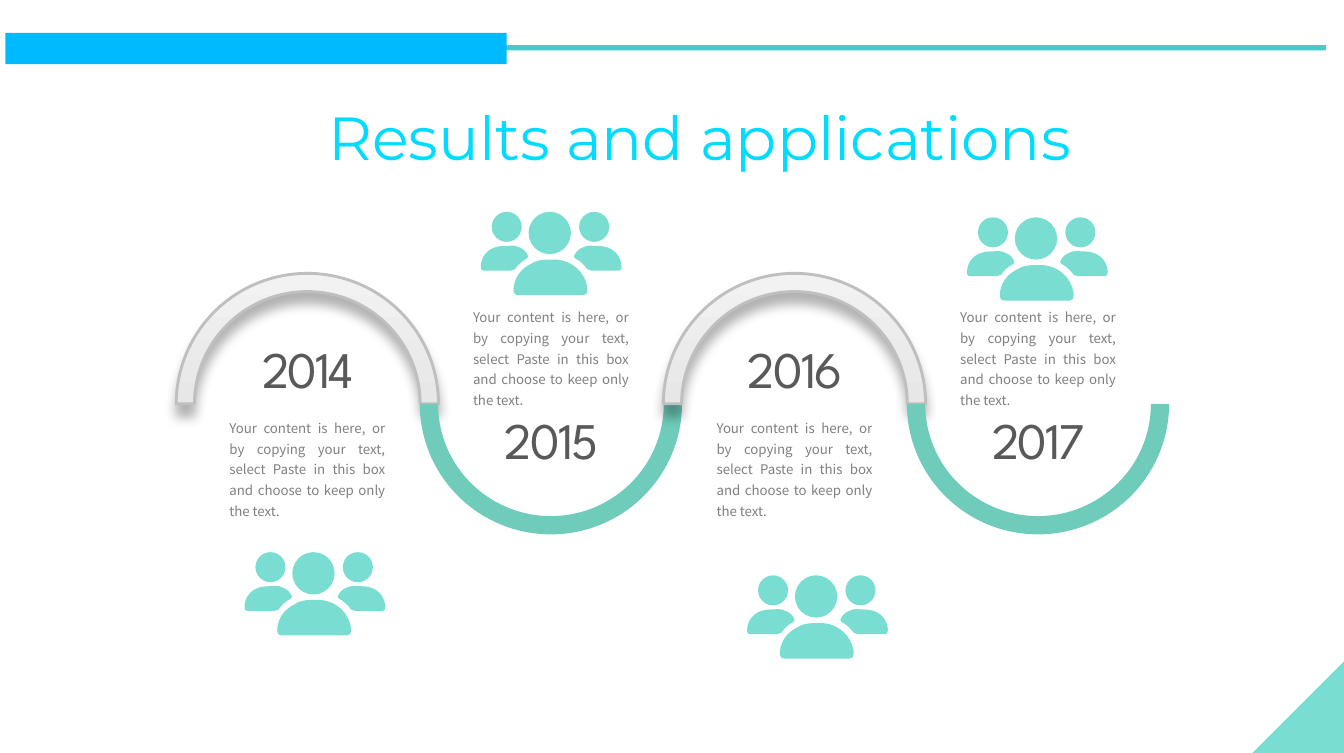
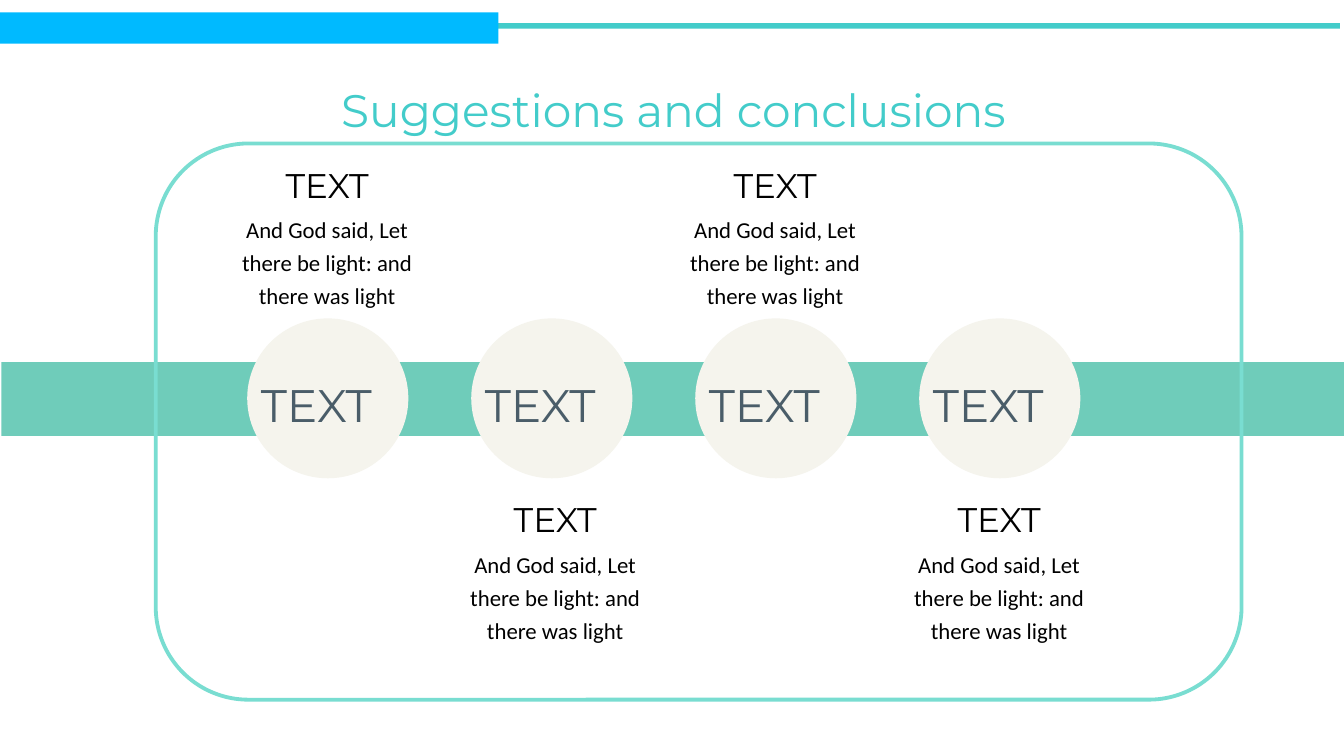
from dataclasses import dataclass

from lxml.etree import SubElement
from pptx import Presentation
from pptx.dml.color import RGBColor
from pptx.enum.shapes import MSO_SHAPE
from pptx.enum.text import MSO_AUTO_SIZE, PP_ALIGN
from pptx.oxml.ns import qn
from pptx.util import Inches, Pt


@dataclass(frozen=True)
class Theme:
    bar: str = "00BAFF"
    rule: str = "43CCCA"
    bright_title: str = "00DCFF"
    mint: str = "79DDD1"
    green: str = "6FCCBA"
    cream: str = "F5F4ED"
    silver_dark: str = "D9D9D9"
    silver_light: str = "F2F2F2"
    silver_edge: str = "BFBFBF"
    year: str = "595959"
    note: str = "808080"
    label: str = "4A5D69"
    black: str = "000000"
    heading_font: str = "Montserrat"
    year_font: str = "League Spartan"
    note_font: str = "Noto Sans CJK SC"
    body_font: str = "Calibri"
    big_title_size: float = 32
    year_size: float = 27
    title_size: float = 24
    label_size: float = 24
    heading_size: float = 18
    body_size: float = 12
    note_size: float = 7


THEME = Theme()
WIDTH, HEIGHT = 9.84, 5.51

NOTE = ("Your content is here, or by copying your text, select Paste in this box "
        "and choose to keep only the text.")
VERSE = "And God said, Let there be light: and there was light"

# Each outline is a start point, then three points for every cubic curve.
ICON_WIDTH = 1.03
BODY = [
    (0.28, 0.61),
    (0.25, 0.61), (0.24, 0.60), (0.24, 0.56),
    (0.25, 0.48), (0.29, 0.42), (0.37, 0.38),
    (0.40, 0.36), (0.44, 0.35), (0.49, 0.35),
    (0.51, 0.35), (0.54, 0.35), (0.56, 0.35),
    (0.67, 0.36), (0.76, 0.44), (0.78, 0.55),
    (0.78, 0.56), (0.78, 0.56), (0.78, 0.57),
    (0.78, 0.60), (0.77, 0.61), (0.75, 0.61),
]
SHOULDER = [
    (0.03, 0.43),
    (0.00, 0.43), (0.00, 0.42), (0.00, 0.39),
    (0.01, 0.30), (0.08, 0.25), (0.17, 0.25),
    (0.21, 0.25), (0.25, 0.24), (0.28, 0.26),
    (0.31, 0.27), (0.33, 0.29), (0.34, 0.31),
    (0.35, 0.32), (0.35, 0.33), (0.34, 0.34),
    (0.30, 0.36), (0.27, 0.39), (0.25, 0.42),
    (0.24, 0.43), (0.23, 0.43), (0.22, 0.43),
]
HEADS = [(0.35, 0.31), (0.08, 0.22), (0.72, 0.22)]  # left, diameter


def paint(shape, fill=None, line=None, line_width=1):
    shape.shadow.inherit = False
    if fill:
        shape.fill.solid()
        shape.fill.fore_color.rgb = RGBColor.from_string(fill)
    else:
        shape.fill.background()
    if line:
        shape.line.color.rgb = RGBColor.from_string(line)
        shape.line.width = Pt(line_width)
    else:
        shape.line.fill.background()


def add_shape(shapes, kind, left, top, width, height, **colours):
    shape = shapes.add_shape(kind, Inches(left), Inches(top), Inches(width), Inches(height))
    paint(shape, **colours)
    return shape


def add_text(page, left, top, width, height, paragraphs, align=PP_ALIGN.CENTER,
             line_spacing=1.0, space=0, wrap=True, inset=0.04):
    """Add a text box; each paragraph is (text, size, font, colour, letter spacing)."""
    box = page.shapes.add_textbox(Inches(left), Inches(top), Inches(width), Inches(height))
    frame = box.text_frame
    frame.word_wrap = wrap
    frame.auto_size = MSO_AUTO_SIZE.SHAPE_TO_FIT_TEXT
    frame.margin_left = frame.margin_right = Inches(0.07)
    frame.margin_top = frame.margin_bottom = Inches(inset)
    for index, (text, size, font, colour, tracking) in enumerate(paragraphs):
        para = frame.add_paragraph() if index else frame.paragraphs[0]
        para.alignment = align
        para.line_spacing = line_spacing
        para.space_before = para.space_after = Pt(space)
        span = para.add_run()
        span.text = text
        span.font.size = Pt(size)
        span.font.name = font
        span.font.color.rgb = RGBColor.from_string(colour)
        if tracking:
            span.font._element.set("spc", str(round(tracking * 100)))


def add_title(page, left, top, width, height, text, size, colour):
    add_text(page, left, top, width, height,
             [(text, size, THEME.heading_font, colour, 0)], line_spacing=1.5, inset=0)


def add_banner(page, left, top, rule_left, rule_top):
    add_shape(page.shapes, MSO_SHAPE.RECTANGLE, rule_left, rule_top, 9.66, 0.04, fill=THEME.rule)
    add_shape(page.shapes, MSO_SHAPE.RECTANGLE, left, top, 3.67, 0.23, fill=THEME.bar)


def add_drop_shadow(shape):
    effects = shape._element.spPr.find(qn("a:effectLst"))
    shadow = SubElement(effects, qn("a:outerShdw"), blurRad=str(Pt(6)), dist=str(Pt(6)),
                        dir="5400000", algn="t", rotWithShape="0")
    colour = SubElement(shadow, qn("a:srgbClr"), val=THEME.black)
    SubElement(colour, qn("a:alpha"), val="30000")


def add_arc(page, left, raised):
    """Add one half ring of the wave: a silver crest or a green trough."""
    arc = add_shape(page.shapes, MSO_SHAPE.BLOCK_ARC, left, 2, 1.92, 1.91, fill=THEME.green)
    for index, value in enumerate((108, 0, 0.07)):
        arc.adjustments[index] = value
    if not raised:
        arc.rotation = 180
        return
    arc.fill.gradient()
    arc.fill.gradient_angle = 90
    for stop, colour in zip(arc.fill.gradient_stops, (THEME.silver_dark, THEME.silver_light)):
        stop.color.rgb = RGBColor.from_string(colour)
    arc.line.color.rgb = RGBColor.from_string(THEME.silver_edge)
    arc.line.width = Pt(1.5)
    add_drop_shadow(arc)


def add_curved_outline(shapes, left, top, points):
    """Build a freeform, then join each three line segments into one cubic curve."""
    vertices = [(Inches(left + x), Inches(top + y)) for x, y in points]
    builder = shapes.build_freeform(*vertices[0])
    builder.add_line_segments(vertices[1:], close=True)
    shape = builder.convert_to_shape()
    segments = list(shape._element.iter(qn("a:lnTo")))[:len(points) - 1]
    for first in range(0, len(segments), 3):
        curve = segments[first]
        curve.tag = qn("a:cubicBezTo")
        for segment in segments[first + 1:first + 3]:
            curve.append(segment[0])
            segment.getparent().remove(segment)
    paint(shape, fill=THEME.mint)


def add_people_icon(page, left, top):
    shapes = page.shapes.add_group_shape().shapes
    mirrored = [(ICON_WIDTH - x, y) for x, y in SHOULDER]
    for points in (BODY, SHOULDER, mirrored):
        add_curved_outline(shapes, left, top, points)
    for offset, size in HEADS:
        add_shape(shapes, MSO_SHAPE.OVAL, left + offset, top, size, size, fill=THEME.mint)


def build_results(page):
    pitch = 5.35 / 3
    icons = [(1.79, 4.04), (3.52, 1.55), (5.47, 4.21), (7.08, 1.59)]
    for index in range(len(icons)):
        add_arc(page, 1.29 + pitch * index, raised=index % 2 == 0)
    for index, icon in enumerate(icons):
        shift = pitch * index
        raised = index % 2 == 0
        add_text(page, 1.83 + shift, 2.43 if raised else 2.95, 0.85, 0.53,
                 [(str(2014 + index), THEME.year_size, THEME.year_font, THEME.year, -1.1)],
                 wrap=False)
        add_text(page, 1.61 + shift, 3 if raised else 2.19, 1.28, 0.83,
                 [(NOTE, THEME.note_size, THEME.note_font, THEME.note, 0)],
                 align=PP_ALIGN.JUSTIFY, line_spacing=1.3)
        add_people_icon(page, *icon)
    add_title(page, 1.99, 0.46, 6.27, 0.72, "Results and applications",
              THEME.big_title_size, THEME.bright_title)
    corner = add_shape(page.shapes, MSO_SHAPE.RIGHT_TRIANGLE, 9.16, 4.84, 0.68, 0.68,
                       fill=THEME.mint)
    corner.rotation = 270
    add_banner(page, 0.04, 0.24, rule_left=0.05, rule_top=0.33)


def build_conclusions(page):
    pitch = 1.64
    add_shape(page.shapes, MSO_SHAPE.RECTANGLE, 0.01, 2.65, WIDTH, 0.54, fill=THEME.green)
    for index, caption_left in enumerate((1.62, 3.29, 4.9, 6.54)):
        shift = pitch * index
        add_shape(page.shapes, MSO_SHAPE.OVAL, 1.81 + shift, 2.33, 1.18, 1.17, fill=THEME.cream)
        add_text(page, 1.84 + shift, 2.64, 1.14, 0.56,
                 [("TEXT", THEME.label_size, THEME.heading_font, THEME.label, 0)],
                 align=PP_ALIGN.LEFT, line_spacing=1.2, space=1.5, wrap=False)
        add_text(page, caption_left, 3.55 if index % 2 else 1.1, 1.55, 1.18,
                 [("TEXT", THEME.heading_size, THEME.heading_font, THEME.black, 0),
                  (VERSE, THEME.body_size, THEME.body_font, THEME.black, 0)],
                 line_spacing=1.2, space=1.5)
    add_title(page, 1.14, 0.4, 7.58, 0.54, "Suggestions and conclusions",
              THEME.title_size, THEME.rule)
    add_shape(page.shapes, MSO_SHAPE.ROUNDED_RECTANGLE, 1.14, 1.05, 7.95, 4.07,
              line=THEME.mint, line_width=2)
    add_banner(page, -0.02, 0.09, rule_left=0.15, rule_top=0.17)


def main():
    deck = Presentation()
    deck.slide_width, deck.slide_height = Inches(WIDTH), Inches(HEIGHT)
    for build in (build_results, build_conclusions):
        build(deck.slides.add_slide(deck.slide_layouts[6]))
    deck.save("out.pptx")


if __name__ == "__main__":
    main()
